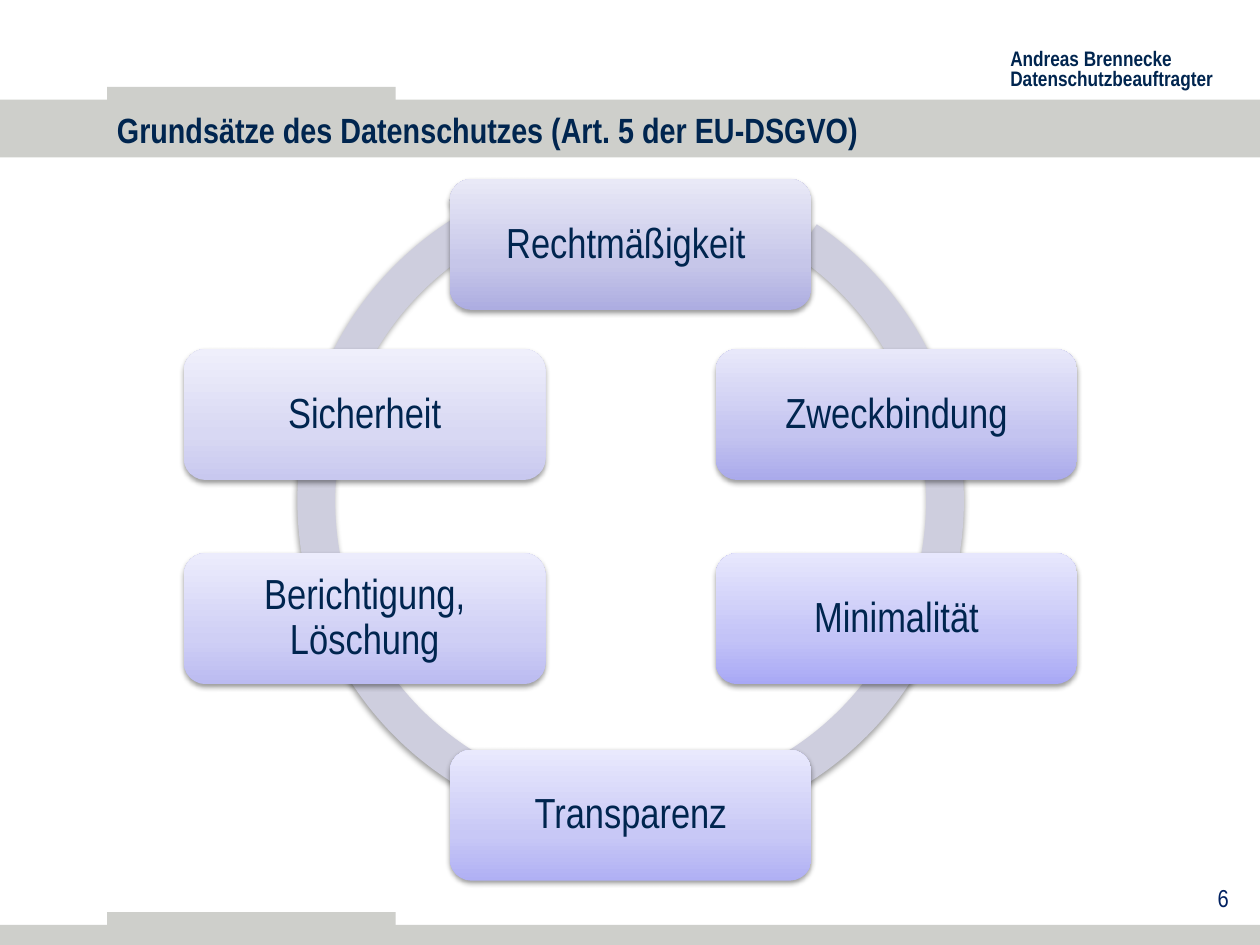
"""Build the slide on the principles of data protection."""
import copy

import pptx
import pptx.dml.color
import pptx.enum.shapes
import pptx.enum.text
import pptx.oxml
import pptx.util
from pptx.util import Inches

RGB = pptx.dml.color.RGBColor
SHAPE = pptx.enum.shapes.MSO_SHAPE
ALIGN = pptx.enum.text.PP_ALIGN
ANCHOR = pptx.enum.text.MSO_ANCHOR

FONT = "Arial Narrow"
NAVY = RGB(0x00, 0x25, 0x4F)
PAGE_BLUE = RGB(0x00, 0x20, 0x60)
GREY = RGB(0xCE, 0xCF, 0xCB)
RING_GREY = RGB(0xCE, 0xCE, 0xDE)

HEADER = "Andreas Brennecke\nDatenschutzbeauftragter"
TITLE = "Grundsätze des Datenschutzes (Art. 5 der EU-DSGVO)"
PAGE = "6"

BANDS = [(0, 0.79, 10, 0.46), (0, 7.34, 10, 0.17),
         (0.85, 0.69, 2.29, 0.13), (0.85, 7.24, 2.29, 0.13)]

PRINCIPLES = [
    ("Rechtmäßigkeit ", 1, 0, ("ADADE1", "C6C6E9", "E9E9F7")),
    ("Zweckbindung", 2, 1, ("AAAAEB", "C4C4F0", "E8E8FA")),
    ("Minimalität", 2, 2, ("A8A8F5", "C3C3F7", "E7E7FD")),
    ("Transparenz", 1, 3, ("B0B0F4", "C8C8F6", "E9E9FD")),
    ("Berichtigung, Löschung", 0, 2, ("BBBBF1", "CFCFF5", "ECECFC")),
    ("Sicherheit", 0, 1, ("C8C8EF", "D8D8F3", "EFEFFB")),
]
STOPS = (0, 0.35, 1)
LEFT, COLUMN_STEP = 1.46, 2.11
ROW_TOPS = (1.42, 2.77, 4.39, 5.95)
BOX_W, BOX_H = 2.87, 1.04
RING_SIZE, RING_WIDTH = 5.59, 0.3

SHADOW = ('<a:outerShdw xmlns:a="http://schemas.openxmlformats.org/drawingml/2006/main" '
          'blurRad="39370" dist="20320" dir="5400000" rotWithShape="0">'
          '<a:srgbClr val="000000"><a:alpha val="38000"/></a:srgbClr></a:outerShdw>')


def write(sp, text, size, color=NAVY, bold=False, align=ALIGN.LEFT,
          anchor=ANCHOR.TOP, spacing=1.0, wrap=True):
    tf = sp.text_frame
    tf.word_wrap = wrap
    tf.vertical_anchor = anchor
    p = tf.paragraphs[0]
    p.text = text.replace("\n", "\v")
    p.alignment = align
    p.line_spacing = spacing
    for r in p.runs:
        r.font.name = FONT
        r.font.size = pptx.util.Pt(size)
        r.font.bold = bold
        r.font.color.rgb = color
    return tf


def add_shape(s, kind, box, color=None, shadow=False):
    sp = s.shapes.add_shape(kind, *map(Inches, box))
    if color is not None:
        sp.fill.solid()
        sp.fill.fore_color.rgb = color
    sp.line.fill.background()
    sp.shadow.inherit = False
    if shadow:
        effects = sp._element.spPr.xpath("a:effectLst")[0]
        effects.append(pptx.oxml.parse_xml(SHADOW))
    return sp


def add_gradient(sp, colors):
    sp.fill.gradient()
    sp.fill.gradient_angle = 90
    last = sp._element.spPr.xpath("a:gradFill/a:gsLst/a:gs")[-1]
    last.addnext(copy.deepcopy(last))
    for stop, position, color in zip(sp.fill.gradient_stops, STOPS, colors):
        stop.position = position
        stop.color.rgb = RGB.from_string(color)


def add_text(s, box, text, size, **style):
    return write(s.shapes.add_textbox(*map(Inches, box)), text, size, **style)


def main():
    prs = pptx.Presentation()
    prs.slide_width, prs.slide_height = Inches(10), Inches(7.5)
    s = prs.slides.add_slide(prs.slide_layouts[6])

    for band in BANDS:
        add_shape(s, SHAPE.RECTANGLE, band, GREY)
    add_text(s, (7.92, 0.35, 1.83, 0.42), HEADER, 12, bold=True, spacing=0.8, wrap=False)
    add_text(s, (0.83, 0.82, 8.7, 0.42), TITLE, 20, bold=True, anchor=ANCHOR.MIDDLE)

    ring = add_shape(s, SHAPE.CIRCULAR_ARROW, (2.21, 1.18, RING_SIZE, RING_SIZE),
                     RING_GREY, shadow=True)
    ring.rotation = 12
    thickness = RING_WIDTH / RING_SIZE
    for i, value in enumerate((thickness, 3.13, 135.81, 175.17, thickness)):
        ring.adjustments[i] = value

    for text, column, row, colors in PRINCIPLES:
        box = (LEFT + column * COLUMN_STEP, ROW_TOPS[row], BOX_W, BOX_H)
        sp = add_shape(s, SHAPE.ROUNDED_RECTANGLE, box, shadow=True)
        add_gradient(sp, colors)
        tf = write(sp, text, 24, align=ALIGN.CENTER, anchor=ANCHOR.MIDDLE, spacing=0.9)
        tf.margin_left = tf.margin_right = tf.margin_top = tf.margin_bottom = Inches(0.1)

    add_text(s, (7.63, 6.96, 2.22, 0.43), PAGE, 14, color=PAGE_BLUE, align=ALIGN.RIGHT)
    prs.save("out.pptx")


if __name__ == "__main__":
    main()
